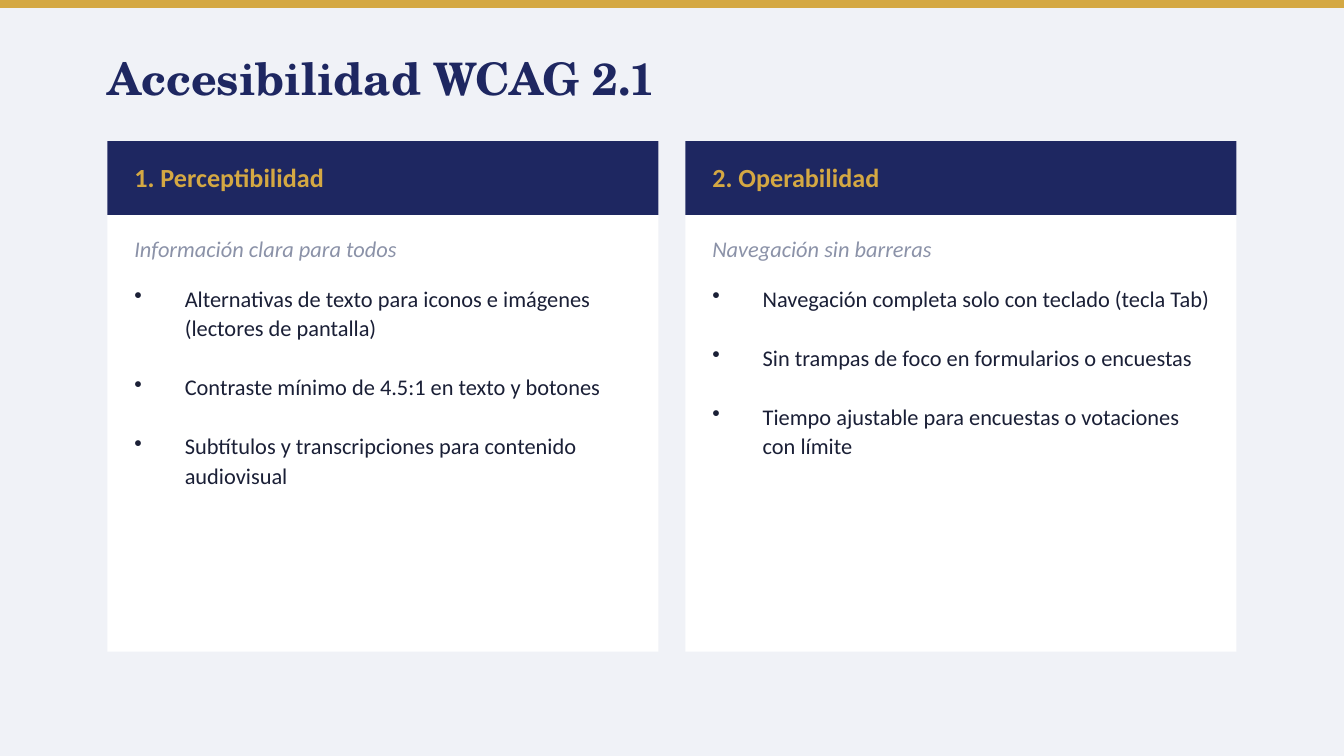
import pptx
import pptx.dml.color
import pptx.enum.shapes
import pptx.enum.text
import pptx.oxml.ns
import pptx.util
from lxml import etree
from pptx.util import Inches

NAVY, GOLD, WHITE = "1E2761", "D4A843", "FFFFFF"
PALE, GREY, INK = "F0F2F7", "8B92A8", "1A1F36"

CARDS = [
    ("1. Perceptibilidad", "Información clara para todos", [
        "Alternativas de texto para iconos e imágenes (lectores de pantalla)",
        "Contraste mínimo de 4.5:1 en texto y botones",
        "Subtítulos y transcripciones para contenido audiovisual",
    ]),
    ("2. Operabilidad", "Navegación sin barreras", [
        "Navegación completa solo con teclado (tecla Tab)",
        "Sin trampas de foco en formularios o encuestas",
        "Tiempo ajustable para encuestas o votaciones con límite",
    ]),
]


def color(value):
    return pptx.dml.color.RGBColor.from_string(value)


def add_bullet(para, indent=Inches(3 / 8)):
    """Give the paragraph a hanging bullet."""
    properties = para._p.get_or_add_pPr()
    properties.set("marL", str(indent))
    properties.set("indent", str(-indent))
    bullet = etree.SubElement(properties, pptx.oxml.ns.qn("a:buChar"))
    bullet.set("char", "•")


class SlideBuilder:
    title = {"name": "TeX Gyre Schola", "size": pptx.util.Pt(24), "bold": True}
    heading = {"name": "Calibri", "size": pptx.util.Pt(14), "bold": True}
    subtitle = {"name": "Calibri", "size": pptx.util.Pt(12), "italic": True}
    body = {"name": "Calibri", "size": pptx.util.Pt(12)}

    def __init__(self, page):
        self.page = page

    def background(self, fill):
        self.page.background.fill.solid()
        self.page.background.fill.fore_color.rgb = color(fill)

    def rectangle(self, left, top, width, height, fill):
        shape = self.page.shapes.add_shape(
            pptx.enum.shapes.MSO_SHAPE.RECTANGLE,
            Inches(left), Inches(top), Inches(width), Inches(height))
        shape.shadow.inherit = False
        shape.fill.solid()
        shape.fill.fore_color.rgb = color(fill)
        shape.line.fill.background()

    def text(self, left, top, width, height, lines, style, ink, bullets=False):
        box = self.page.shapes.add_textbox(
            Inches(left), Inches(top), Inches(width), Inches(height))
        frame = box.text_frame
        anchor = pptx.enum.text.MSO_ANCHOR
        layout = {"word_wrap": True, "margin_left": 0, "margin_right": 0,
                  "margin_top": 0, "margin_bottom": 0,
                  "vertical_anchor": anchor.TOP if bullets else anchor.MIDDLE}
        for name, value in layout.items():
            setattr(frame, name, value)
        for index, line in enumerate(lines):
            para = frame.add_paragraph() if index else frame.paragraphs[0]
            if bullets:
                para.line_spacing = 1.1
                if index:
                    para.space_before = pptx.util.Pt(15.8)
                add_bullet(para)
            span = para.add_run()
            span.text = line
            for font in (para.font, span.font):
                for name, value in style.items():
                    setattr(font, name, value)
                font.color.rgb = color(ink)

    def card(self, left, heading, subtitle, points):
        self.rectangle(left, 1.05, 4.1, 3.8, WHITE)
        self.rectangle(left, 1.05, 4.1, 0.55, NAVY)
        inner = left + 0.2
        self.text(inner, 1.07, 3.5, 0.5, [heading], self.heading, GOLD)
        self.text(inner, 1.7, 3.7, 0.3, [subtitle], self.subtitle, GREY)
        self.text(inner, 2.1, 3.7, 2.5, points, self.body, INK, bullets=True)


def main():
    deck = pptx.Presentation()
    deck.slide_width, deck.slide_height = Inches(10), Inches(10 * 9 / 16)
    builder = SlideBuilder(deck.slides.add_slide(deck.slide_layouts[6]))
    builder.background(PALE)
    builder.rectangle(0, 0, 10, 0.06, GOLD)
    builder.text(0.8, 0.3, 8, 0.55, ["Accesibilidad WCAG 2.1"], builder.title, NAVY)
    for column, content in enumerate(CARDS):
        builder.card(0.8 + column * 4.3, *content)
    deck.save("out.pptx")


if __name__ == "__main__":
    main()
